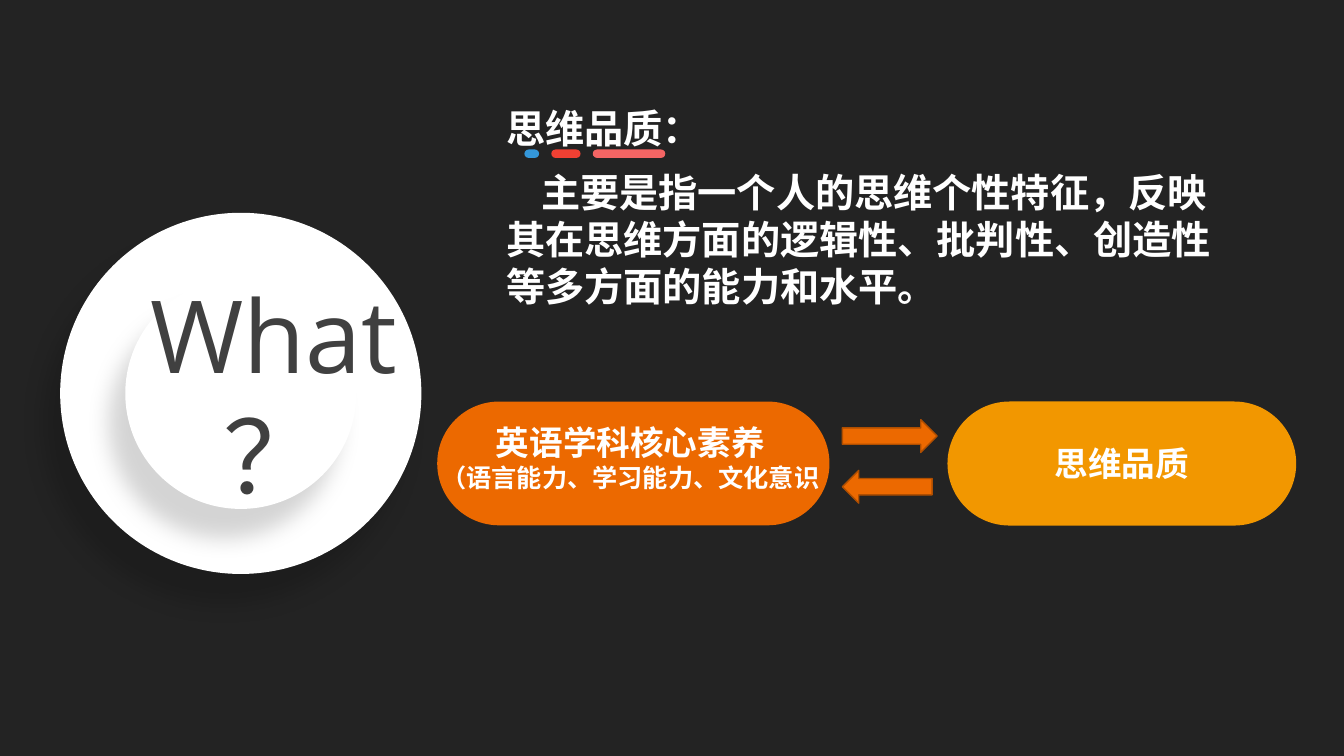
from lxml import etree
from pptx import Presentation
from pptx.dml.color import RGBColor
from pptx.enum.shapes import MSO_SHAPE as SHAPE
from pptx.enum.text import MSO_ANCHOR as ANCHOR, MSO_AUTO_SIZE as AUTO, PP_ALIGN as ALIGN
from pptx.oxml.ns import qn
from pptx.util import Pt

BACKGROUND = RGBColor(0x23, 0x23, 0x23)
WHITE = RGBColor(0xFF, 0xFF, 0xFF)
GREY = RGBColor(0x40, 0x40, 0x40)
BLUE = RGBColor(0x34, 0x97, 0xDA)
RED = RGBColor(0xF0, 0x40, 0x33)
PINK = RGBColor(0xF4, 0x65, 0x64)
ORANGE = RGBColor(0xEC, 0x69, 0x00)
AMBER = RGBColor(0xF2, 0x97, 0x00)
BROWN = RGBColor(0xAF, 0x4E, 0x00)


class SlideBuilder:
    font = "Open Sans"

    def __init__(self, slide):
        self.slide = slide
        fill = slide.background.fill
        fill.solid()
        fill.fore_color.rgb = BACKGROUND

    def shape(self, kind, x, y, w, h, color, line=None):
        sp = self.slide.shapes.add_shape(kind, Pt(x), Pt(y), Pt(w), Pt(h))
        sp.shadow.inherit = False
        sp.fill.solid()
        sp.fill.fore_color.rgb = color
        if line is None:
            sp.line.fill.background()
        else:
            sp.line.color.rgb = line
            sp.line.width = Pt(1)
        return sp

    def pill(self, x, y, w, h, color):
        sp = self.shape(SHAPE.ROUNDED_RECTANGLE, x, y, w, h, color)
        sp.adjustments[0] = 0.5
        return sp

    def disc(self, cx, cy, diameter):
        """White circle with a soft shadow to the lower left."""
        sp = self.shape(SHAPE.OVAL, cx - diameter / 2, cy - diameter / 2,
                        diameter, diameter, WHITE)
        effects = sp._element.spPr.find(qn("a:effectLst"))
        shadow = etree.SubElement(effects, qn("a:outerShdw"), blurRad=str(Pt(16)),
                                  dist=str(Pt(24)), dir=str(120 * 60000),
                                  algn="ctr", rotWithShape="0")
        black = etree.SubElement(shadow, qn("a:srgbClr"), val="000000")
        etree.SubElement(black, qn("a:alpha"), val="17000")

    def fill_text(self, tf, lines, color=WHITE, bold=True, align=ALIGN.CENTER, after=0):
        """Fill a frame from (text, size, first-line indent) entries."""
        for i, (text, size, indent) in enumerate(lines):
            p = tf.add_paragraph() if i else tf.paragraphs[0]
            p.text = text
            p.alignment = align
            p.space_after = Pt(after)
            if indent:
                p._p.get_or_add_pPr().set("indent", str(Pt(indent)))
            p.font.name = self.font
            p.font.size = Pt(size)
            p.font.bold = bold
            p.font.color.rgb = color

    def text(self, x, y, w, h, lines, anchor=ANCHOR.MIDDLE, wrap=True,
             margin=0, **style):
        tf = self.slide.shapes.add_textbox(Pt(x), Pt(y), Pt(w), Pt(h)).text_frame
        tf.word_wrap = wrap
        tf.auto_size = AUTO.SHAPE_TO_FIT_TEXT
        tf.vertical_anchor = anchor
        tf.margin_left = tf.margin_right = Pt(2 * margin)
        tf.margin_top = tf.margin_bottom = Pt(margin)
        self.fill_text(tf, lines, **style)


def main():
    prs = Presentation()
    prs.slide_width, prs.slide_height = Pt(960), Pt(540)
    s = SlideBuilder(prs.slides.add_slide(prs.slide_layouts[6]))

    for diameter in (258, 165):
        s.disc(172, 281, diameter)
    s.text(91.4, 237.6, 208.8, 87.1, [("What？", 72, 0)],
           color=GREY, bold=False, after=12)

    s.text(361.6, 74.2, 520.6, 147.6, [
        ("思维品质：", 28, 0),
        ("主要是指一个人的思维个性特征，反映其在思维方面的逻辑性、批判性、创造性等多方面的能力和水平。", 28, 25),
    ], align=ALIGN.LEFT, after=12)

    x = 374.6
    for width, color in ((10.5, BLUE), (20.9, RED), (51.8, PINK)):
        s.pill(x, 106.8, width, 6, color)
        x += width + 8.7

    s.pill(312.3, 286.8, 280.2, 88.4, ORANGE)
    quality = s.pill(676.8, 286.8, 249.1, 88.6, AMBER)
    quality.text_frame.vertical_anchor = ANCHOR.MIDDLE
    s.fill_text(quality.text_frame, [("思维品质", 24, 0)])

    for kind, y, width in ((SHAPE.RIGHT_ARROW, 299.8, 67.7),
                           (SHAPE.LEFT_ARROW, 336, 64.1)):
        s.shape(kind, 601.7, y, width, 23.4, ORANGE, BROWN)

    s.text(307.4, 298.1, 285.8, 79.9, [
        ("英语学科核心素养", 24, 0),
        ("（语言能力、学习能力、文化意识", 18, 0),
    ], anchor=ANCHOR.TOP, wrap=False, margin=3.6)

    prs.save("out.pptx")


if __name__ == "__main__":
    main()
